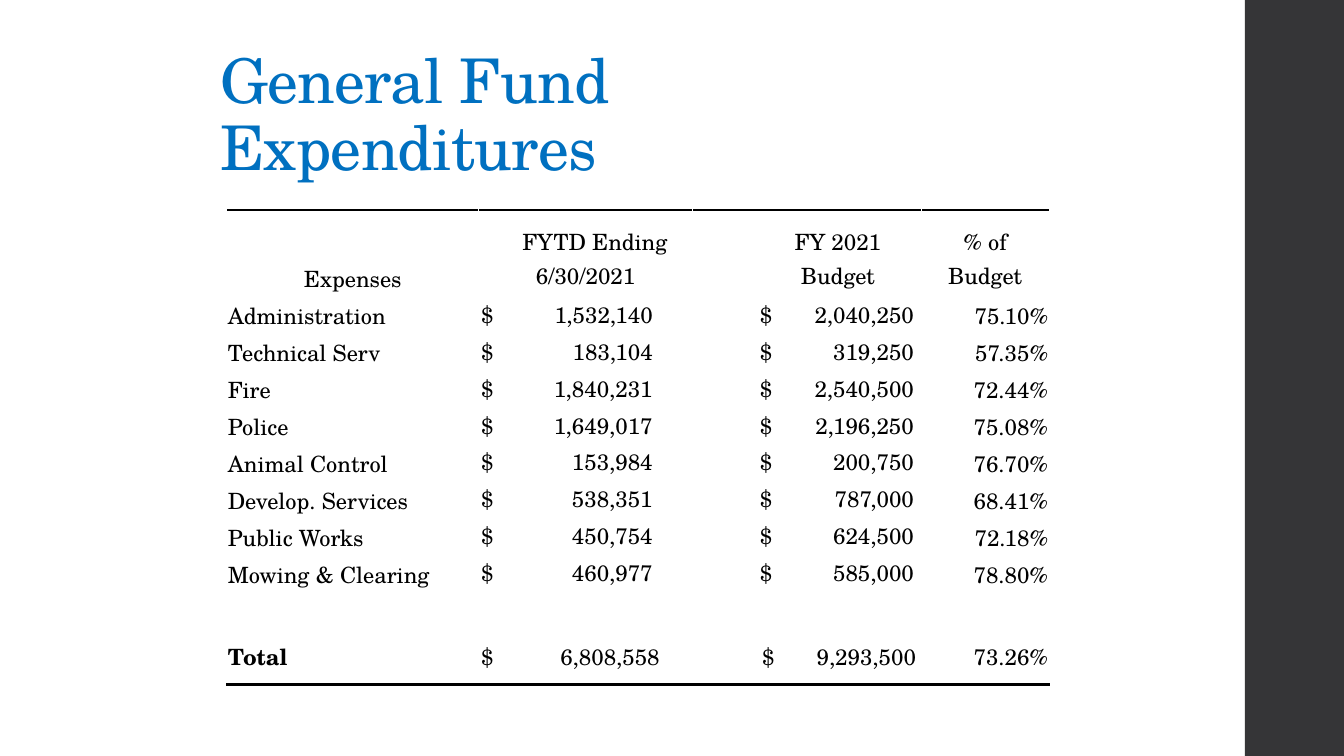
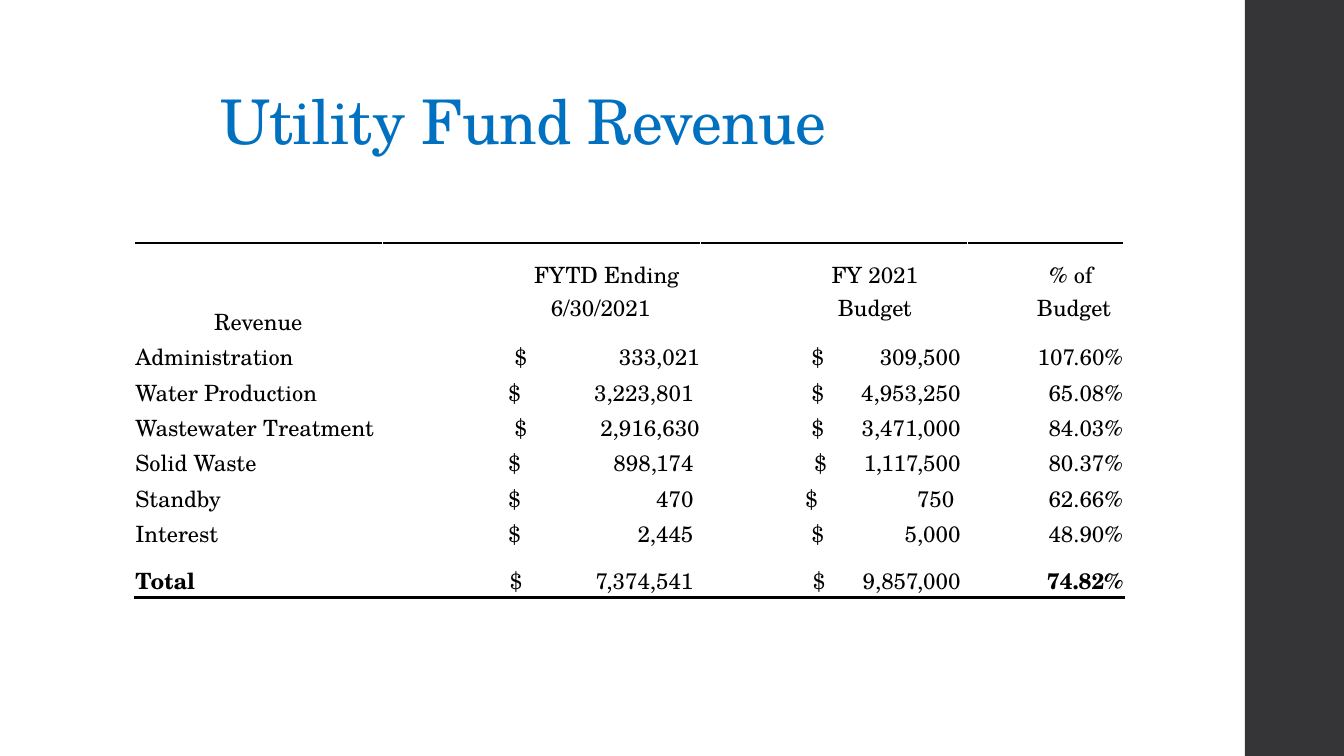
import pptx
import pptx.dml.color
import pptx.enum.shapes
import pptx.enum.text
import pptx.oxml
import pptx.oxml.ns
import pptx.util

Pt = pptx.util.Pt
RGB = pptx.dml.color.RGBColor
ALIGN = pptx.enum.text.PP_ALIGN
ANCHOR = pptx.enum.text.MSO_ANCHOR
LEFT, MID, RIGHT = ALIGN.LEFT, ALIGN.CENTER, ALIGN.RIGHT
TOP, CENTER, BASE = ANCHOR.TOP, ANCHOR.MIDDLE, ANCHOR.BOTTOM

# Shared style
BLUE = RGB(0x00, 0x70, 0xC0)
BLACK = RGB(0x00, 0x00, 0x00)
WHITE = RGB(0xFF, 0xFF, 0xFF)
DARK = RGB(0x35, 0x35, 0x37)
FONT = "TeX Gyre Schola"
WIDE, HIGH = 960, 540
BAND = 70.8
EDGE = 0.72
NUDGE = 4.45

# Money is an amount with shifts of its dollar sign and of its right edge
SPENT = [
    ("Administration", "1,532,140", "2,040,250", "75.10%"),
    ("Technical Serv", "183,104", "319,250", "57.35%"),
    ("Fire", "1,840,231", "2,540,500", "72.44%"),
    ("Police", "1,649,017", "2,196,250", "75.08%"),
    ("Animal Control", "153,984", "200,750", "76.70%"),
    ("Develop. Services", "538,351", "787,000", "68.41%"),
    ("Public Works", "450,754", "624,500", "72.18%"),
    ("Mowing & Clearing", "460,977", "585,000", "78.80%"),
    ("", "", "", ""),
    ("Total", ("6,808,558", 0, 5), ("9,293,500", 1.5, 1.5), "73.26%"),
]
EARNED = [
    ("Administration", ("333,021", NUDGE, NUDGE), "309,500", "107.60%"),
    ("Water Production", "3,223,801", "4,953,250", "65.08%"),
    ("Wastewater Treatment", ("2,916,630", NUDGE, NUDGE), "3,471,000",
     "84.03%"),
    ("Solid Waste", "898,174", ("1,117,500", 2, 0), "80.37%"),
    ("Standby", "470", ("750", -NUDGE, -NUDGE), "62.66%"),
    ("Interest", "2,445", "5,000", "48.90%"),
    ("Total", ("7,374,541", 1, 0), ("9,857,000", 1, 0), "74.82%"),
]


def write(frame, text, size=16, color=BLACK, bold=False, align=LEFT,
          indent=0, tabs=(), space=None, track=None):
    """Write one paragraph; tabs holds (position, "l" or "r") pairs."""
    para = frame.paragraphs[0]
    para.alignment = align
    if space:
        para.line_spacing = space
    run = para.add_run()
    run.text = text
    run.font.name, run.font.size = FONT, Pt(size)
    run.font.bold, run.font.color.rgb = bold, color
    if track:
        run.font._element.set("spc", str(int(track * 100)))
    props = para._p.get_or_add_pPr()
    if indent:
        props.set("marL", str(Pt(indent)))
        props.set("indent", "0")
    if tabs:
        stops = pptx.oxml.ns.qn("a:tabLst")
        stops = props.makeelement(stops, {})
        props.append(stops)
        for pos, kind in tabs:
            stop = stops.makeelement(pptx.oxml.ns.qn("a:tab"),
                                     {"pos": str(Pt(pos)), "algn": kind})
            stops.append(stop)


def rule(cell, side):
    """Draw a black line on the top (T) or bottom (B) of a cell."""
    line = pptx.oxml.parse_xml(
        f'<a:ln{side} {pptx.oxml.ns.nsdecls("a")} w="{Pt(2)}">'
        f'<a:solidFill><a:srgbClr val="{BLACK}"/></a:solidFill></a:ln{side}>')
    cell._tc.get_or_add_tcPr().insert(0, line)


def band(slide):
    """Put the dark side band on the layout that the slides share."""
    bar = slide.shapes.add_shape(
        pptx.enum.shapes.MSO_SHAPE.RECTANGLE,
        Pt(WIDE - BAND), Pt(0), Pt(BAND), Pt(HIGH))
    bar.shadow.inherit = False
    bar.fill.solid()
    bar.fill.fore_color.rgb = DARK
    bar.line.fill.background()
    slide.slide_layout.shapes.element.append(bar._element)


def title(slide, text, box):
    """Place the title at the foot of its box."""
    head = slide.shapes.title
    head.left, head.top, head.width, head.height = map(Pt, box)
    frame = head.text_frame
    frame.word_wrap = True
    frame.auto_size = pptx.enum.text.MSO_AUTO_SIZE.NONE
    frame.vertical_anchor = BASE
    write(frame, text, size=44, color=BLUE, space=0.9, track=-0.5)


def ledger(slide, left, top, cols, heights, heads, rows, stops,
           middle=False, strong=False):
    """Build a budget table: two heading rows, the items and a total."""
    shape = slide.shapes.add_table(
        len(heights), len(cols), Pt(left), Pt(top),
        Pt(sum(cols)), Pt(sum(heights)))
    table = shape.table
    table.first_row = table.horz_banding = False
    for col, width in zip(table.columns, cols):
        col.width = Pt(width)
    for row, height in zip(table.rows, heights):
        row.height = Pt(height)

    last = len(heights) - 1
    for r, row in enumerate(heads + rows):
        for c, value in enumerate(row):
            cell = table.cell(r, c)
            money = r > 1 and c in stops
            cell.fill.solid()
            cell.fill.fore_color.rgb = WHITE
            cell.margin_left = cell.margin_top = Pt(EDGE)
            cell.margin_right = Pt(0 if money else EDGE)
            cell.margin_bottom = Pt(0)
            cell.vertical_anchor = BASE
            if r == 1 and c:
                cell.vertical_anchor = TOP
            elif middle and (money or r == last):
                cell.vertical_anchor = CENTER
            if r in (0, last):
                rule(cell, "B" if r else "T")
            if not value:
                continue
            if r < 2:
                text, indent = value
                write(cell.text_frame, text, align=MID, indent=indent)
            elif money:
                text, *shift = value if isinstance(value, tuple) else (
                    value, 0, 0)
                sign, end = (a + b for a, b in zip(stops[c], shift))
                write(cell.text_frame, f"\t$\t{text}",
                      tabs=[(sign, "l"), (end, "r")])
            else:
                write(cell.text_frame, value, align=RIGHT if c else LEFT,
                      bold=r == last and (c == 0 or strong))


def main():
    deck = pptx.Presentation()
    deck.slide_width, deck.slide_height = Pt(WIDE), Pt(HIGH)
    layout = deck.slide_layouts[5]

    # General fund
    slide = deck.slides.add_slide(layout)
    band(slide)
    title(slide, "General Fund Expenditures", (150, 12, 540, 122.6))
    ledger(slide, 162, 150, [180, 152.6, 163.4, 91.4],
           [34.5] + [26.4] * 10 + [40.5],
           [(None, ("FYTD Ending", 13.3), ("FY 2021", 44.5), ("% of", 0)),
            (("Expenses", 0), ("6/30/2021", 0), ("Budget", 44.5),
             ("Budget", 0))],
           SPENT, {1: (1, 123.5), 2: (47.5, 157.5)}, middle=True)

    # Utility fund
    slide = deck.slides.add_slide(layout)
    title(slide, "Utility Fund Revenue", (150, 12, 540, 104.6))
    ledger(slide, 96, 173.5, [177, 227.5, 190.8, 111.6],
           [34, 34] + [25.2] * 6 + [34],
           [(None, ("FYTD Ending", 93.4), ("FY 2021", 58), ("% of", 35.6)),
            (("Revenue", 0), ("6/30/2021", 84.5), ("Budget", 58),
             ("Budget", 40))],
           EARNED, {1: (89.5, 221.6), 2: (78.5, 184.9)}, strong=True)

    deck.save("out.pptx")


if __name__ == "__main__":
    main()
